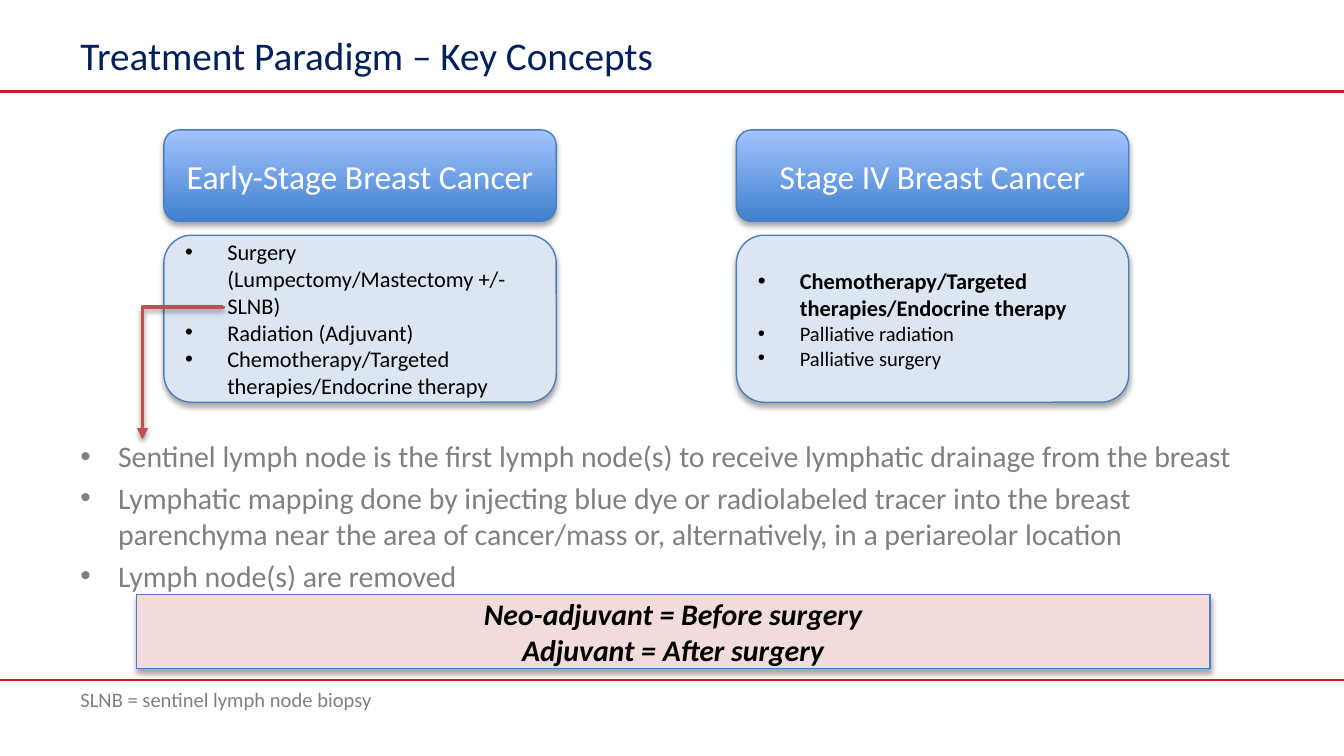
from dataclasses import dataclass

from pptx import Presentation
from pptx.dml.color import RGBColor as Color
from pptx.enum.shapes import MSO_CONNECTOR as Link, MSO_SHAPE as Shape
from pptx.enum.text import MSO_ANCHOR as Anchor, PP_ALIGN as Align
from pptx.oxml import parse_xml
from pptx.oxml.ns import nsdecls
from pptx.util import Pt


@dataclass(frozen=True)
class Theme:
    font: str = "Calibri"
    navy: str = "00205B"
    red: str = "CF1C20"
    arrow: str = "C0504D"
    outline: str = "4B7EBC"
    header: tuple = ("3F80CE", "A4C4FF")
    card: str = "DCE6F2"
    banner: str = "F2DCDB"
    white: str = "FFFFFF"
    black: str = "000000"
    gray: str = "808080"
    title_size: int = 21
    header_size: int = 18
    text_size: int = 16
    card_size: int = 12
    small_size: int = 11


THEME = Theme()
BOLD = {"bold": True}
SMALL = {"size": Pt(THEME.small_size)}

TITLE = [("Treatment Paradigm – Key Concepts", {})]
FOOTNOTE = [("SLNB = sentinel lymph node biopsy", {})]
STAGES = [
    ("Early-Stage Breast Cancer", [
        ("Surgery (Lumpectomy/Mastectomy +/-SLNB)", {}),
        ("Radiation (Adjuvant)", {}),
        ("Chemotherapy/Targeted therapies/Endocrine therapy", {}),
    ]),
    ("Stage IV Breast Cancer", [
        ("Chemotherapy/Targeted therapies/Endocrine therapy", BOLD),
        ("Palliative radiation", SMALL),
        ("Palliative surgery", SMALL),
    ]),
]
NOTES = [
    ("Sentinel lymph node is the first lymph node(s) to receive lymphatic drainage from the breast", {}),
    ("Lymphatic mapping done by injecting blue dye or radiolabeled tracer into the breast "
     "parenchyma near the area of cancer/mass or, alternatively, in a periareolar location", {}),
    ("Lymph node(s) are removed", {}),
]
TIMING = [
    ("Neo-adjuvant = Before surgery", {}),
    ("Adjuvant = After surgery", {}),
]

WIDTH, HEIGHT = 720, 405
MARGIN = 36
RULES = [(364.3, 1), (49, 1.25)]
STAGE_LEFT, STAGE_STEP, STAGE_WIDTH = 87.8, 306.7, 210.2
HEADER_TOP, HEADER_HEIGHT = 69.6, 49
CARD_TOP, CARD_HEIGHT = 126, 89.5
ARROW_START, ARROW_END = (119.5, 164.2), (76.3, 235.4)


def add_effects(item, opacity=0):
    shadow = (
        f'<a:outerShdw blurRad="{Pt(3.1)}" dist="{Pt(1.8)}" dir="5400000" rotWithShape="0">'
        f'<a:srgbClr val="{THEME.black}"><a:alpha val="{opacity * 1000}"/></a:srgbClr></a:outerShdw>'
    ) if opacity else ""
    item._element.spPr.append(parse_xml(f'<a:effectLst {nsdecls("a")}>{shadow}</a:effectLst>'))


def set_line(item, color, width):
    item.line.color.rgb = Color.from_string(color)
    item.line.width = Pt(width)


def write(box, content, size, color, anchor=Anchor.MIDDLE, align=Align.LEFT,
          indent=0, gap=0, **style):
    frame = box.text_frame
    frame.word_wrap = True
    frame.vertical_anchor = anchor
    for index, (text, extra) in enumerate(content):
        para = frame.add_paragraph() if index else frame.paragraphs[0]
        if indent:
            props = para._p.get_or_add_pPr()
            props.set("marL", str(Pt(indent)))
            props.set("indent", str(-Pt(indent)))
            props.append(parse_xml(f'<a:buFont {nsdecls("a")} typeface="Arial"/>'))
            props.append(parse_xml(f'<a:buChar {nsdecls("a")} char="•"/>'))
        para.alignment = align
        if index and gap:
            para.space_before = Pt(gap)
        span = para.add_run()
        span.text = text
        span.font.color.rgb = Color.from_string(color)
        for name, value in {"name": THEME.font, "size": Pt(size), **style, **extra}.items():
            setattr(span.font, name, value)


def add_text(page, place, content, size, color, **layout):
    box = page.shapes.add_textbox(*map(Pt, place))
    write(box, content, size, color, **layout)


def add_panel(page, kind, place, fill, content, size, color, **layout):
    box = page.shapes.add_shape(kind, *map(Pt, place))
    if isinstance(fill, tuple):
        box.fill.gradient()
        box.fill.gradient_angle = 90
        for stop, shade in zip(box.fill.gradient_stops, fill):
            stop.color.rgb = Color.from_string(shade)
    else:
        box.fill.solid()
        box.fill.fore_color.rgb = Color.from_string(fill)
    set_line(box, THEME.outline, 0.75)
    add_effects(box, 35)
    write(box, content, size, color, **layout)


def add_rule(page, top, width):
    rule = page.shapes.add_connector(Link.STRAIGHT, 0, Pt(top), Pt(WIDTH), Pt(top))
    set_line(rule, THEME.red, width)
    add_effects(rule)


def add_bent_arrow(page, start, end):
    across, down = start[0] - end[0], end[1] - start[1]
    left = (start[0] + end[0] - down) / 2
    top = (start[1] + end[1] - across) / 2
    arrow = page.shapes.add_connector(
        Link.ELBOW, *map(Pt, (left, top, left + down, top + across)))
    props = arrow._element.spPr
    props.xfrm.set("rot", "5400000")
    props.prstGeom.get_or_add_avLst().append(
        parse_xml(f'<a:gd {nsdecls("a")} name="adj1" fmla="val 400"/>'))
    set_line(arrow, THEME.arrow, 2)
    arrow.line._get_or_add_ln().append(parse_xml(f'<a:tailEnd {nsdecls("a")} type="triangle"/>'))
    add_effects(arrow, 38)


def main():
    deck = Presentation()
    deck.slide_width, deck.slide_height = Pt(WIDTH), Pt(HEIGHT)
    page = deck.slides.add_slide(deck.slide_layouts[6])

    for top, width in RULES:
        add_rule(page, top, width)
    add_text(page, (MARGIN, 16.6, WIDTH - 2 * MARGIN, 25.2), TITLE, THEME.title_size, THEME.navy)

    for column, (heading, treatments) in enumerate(STAGES):
        left = STAGE_LEFT + column * STAGE_STEP
        add_panel(page, Shape.ROUNDED_RECTANGLE, (left, HEADER_TOP, STAGE_WIDTH, HEADER_HEIGHT),
                  THEME.header, [(heading, {})], THEME.header_size, THEME.white,
                  align=Align.CENTER)
        add_panel(page, Shape.ROUNDED_RECTANGLE, (left, CARD_TOP, STAGE_WIDTH, CARD_HEIGHT),
                  THEME.card, treatments, THEME.card_size, THEME.black, indent=22.5)

    add_text(page, (MARGIN, 364.3, 477.4, 32.4), FOOTNOTE, THEME.small_size, THEME.gray,
             anchor=Anchor.TOP)
    add_text(page, (MARGIN, 231.1, WIDTH - 2 * MARGIN, 119.5), NOTES, THEME.text_size,
             THEME.gray, anchor=Anchor.TOP, indent=20.2, gap=3.2)
    add_bent_arrow(page, ARROW_START, ARROW_END)
    add_panel(page, Shape.RECTANGLE, (73, 318.5, 575.3, 39.6), THEME.banner, TIMING,
              THEME.text_size, THEME.black, align=Align.CENTER, bold=True, italic=True)

    deck.save("out.pptx")


if __name__ == "__main__":
    main()
